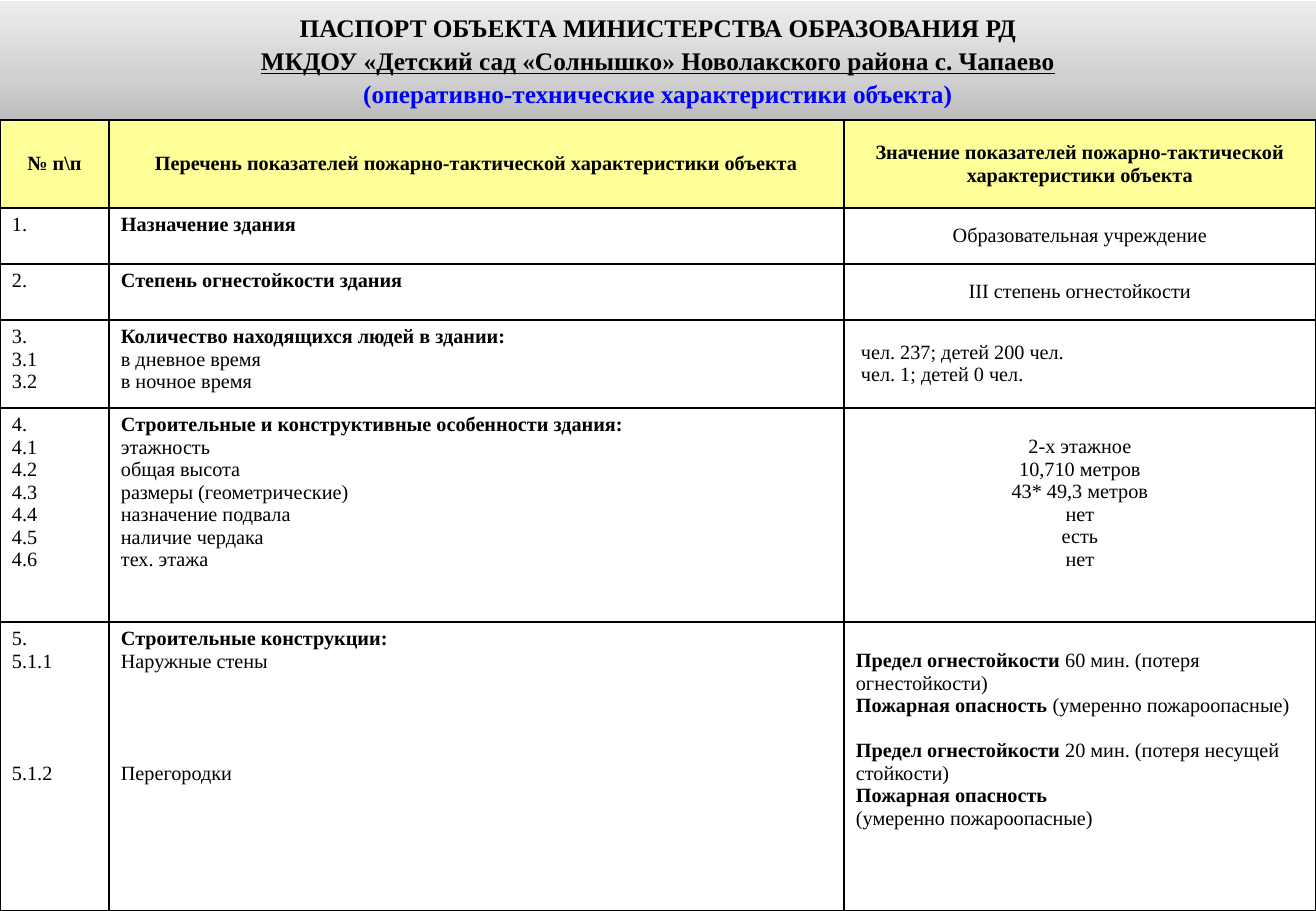
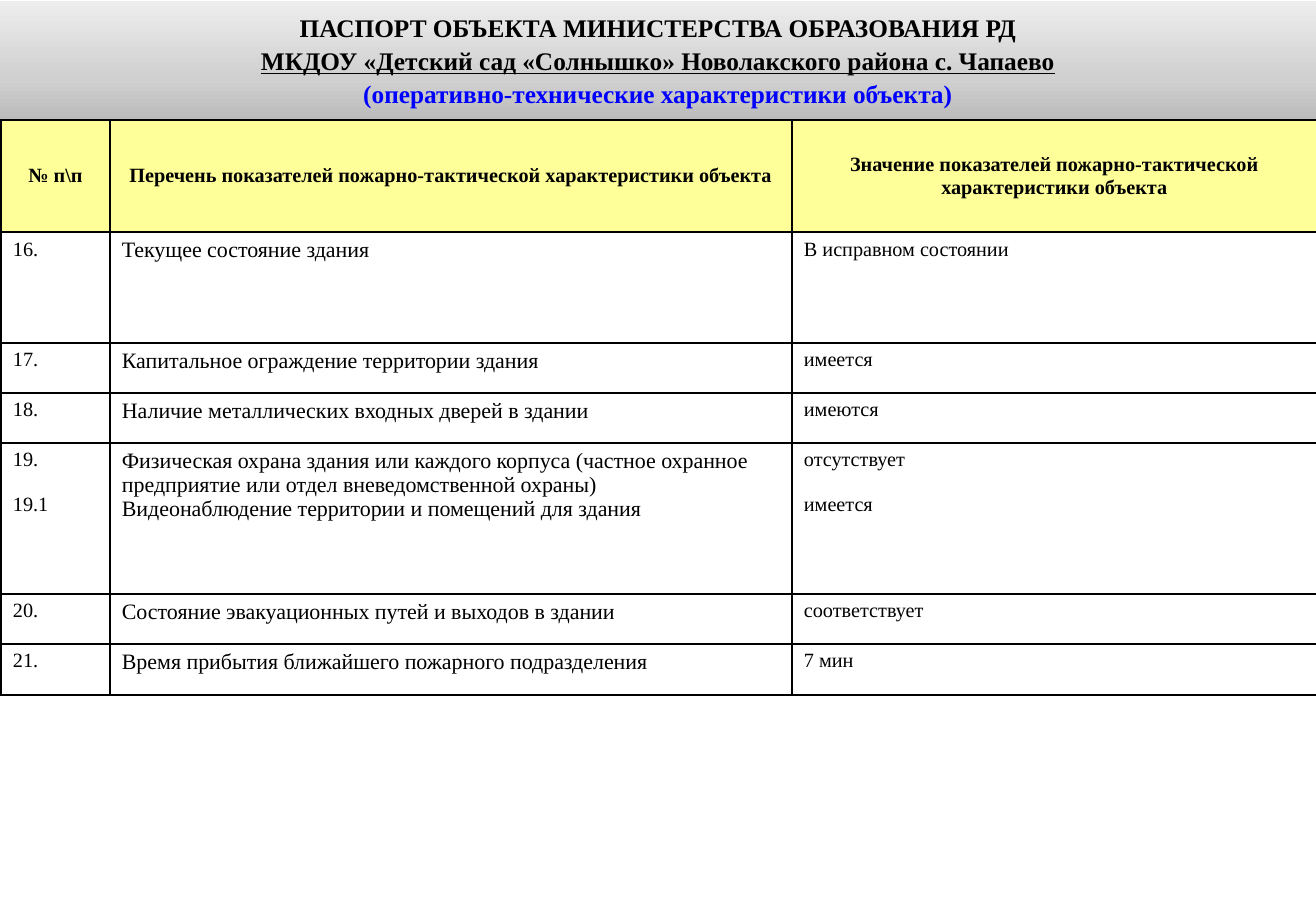
from dataclasses import dataclass, field

from lxml.etree import SubElement
from pptx import Presentation
from pptx.dml.color import RGBColor
from pptx.enum.text import MSO_ANCHOR, MSO_AUTO_SIZE, PP_ALIGN
from pptx.oxml.ns import qn
from pptx.util import Emu, Pt

# Shared look
EMU_PER_PX = 914400 / 121.5
SLIDE_W, SLIDE_H = 1316, 911
BAND_TOP, BAND_H = 1, 119
TABLE_TOP = BAND_TOP + BAND_H
INSET_X, INSET_Y = 12, 6
LINE_PX, LINE_PT = 22, 13.3  # height of one 12 pt line
FONT = "Times New Roman"
BLACK = RGBColor(0x00, 0x00, 0x00)
WHITE = RGBColor(0xFF, 0xFF, 0xFF)
BLUE = RGBColor(0x00, 0x00, 0xFF)
YELLOW = RGBColor(0xFF, 0xFF, 0x99)
BAND_STOPS = [
    (0, RGBColor(0xBC, 0xBC, 0xBC)),
    (35, RGBColor(0xD0, 0xD0, 0xD0)),
    (100, RGBColor(0xED, 0xED, 0xED)),
]
TITLE_LINES = [
    ("ПАСПОРТ ОБЪЕКТА МИНИСТЕРСТВА ОБРАЗОВАНИЯ РД", BLACK, False),
    ("МКДОУ «Детский сад «Солнышко» Новолакского района с. Чапаево", BLACK, True),
    ("(оперативно-технические характеристики объекта)", BLUE, False),
]


@dataclass
class Entry:
    """Cell content: in each line the part before "|" is bold."""
    lines: list
    gaps: dict = field(default_factory=dict)  # line index -> free lines above it
    size: int = 12
    align: PP_ALIGN = PP_ALIGN.LEFT
    anchor: MSO_ANCHOR = MSO_ANCHOR.TOP
    lead: int = 0  # free lines above the first line
    indent: int = 0
    fill: RGBColor = WHITE


def centred(text, fill=WHITE):
    return Entry([text], align=PP_ALIGN.CENTER, anchor=MSO_ANCHOR.MIDDLE, fill=fill)


HEADINGS = [centred(text + "|", YELLOW) for text in (
    "№ п\\п",
    "Перечень показателей пожарно-тактической характеристики объекта",
    "Значение показателей пожарно-тактической характеристики объекта",
)]

BUILDING_ROWS = [
    [Entry(["1."]), Entry(["Назначение здания|"]), centred("Образовательная учреждение")],
    [Entry(["2."]), Entry(["Степень огнестойкости здания|"]),
     centred("III степень огнестойкости")],
    [Entry(["3.", "3.1", "3.2"]),
     Entry(["Количество находящихся людей в здании:|", "в дневное время", "в ночное время"]),
     Entry(["чел. 237; детей 200 чел.", "чел. 1; детей 0 чел."],
           anchor=MSO_ANCHOR.MIDDLE, indent=5)],
    [Entry(["4.", "4.1", "4.2", "4.3", "4.4", "4.5", "4.6"]),
     Entry(["Строительные и конструктивные особенности здания:|", "этажность",
            "общая высота", "размеры (геометрические)", "назначение подвала",
            "наличие чердака", "тех. этажа"]),
     Entry(["2-х этажное", "10,710 метров", "43* 49,3 метров", "нет", "есть", "нет"],
           align=PP_ALIGN.CENTER, lead=1)],
    [Entry(["5.", "5.1.1", "5.1.2"], {2: 4}),
     Entry(["Строительные конструкции:|", "Наружные стены", "Перегородки"], {2: 4}),
     Entry(["Предел огнестойкости |60 мин. (потеря огнестойкости)",
            "Пожарная опасность |(умеренно пожароопасные)",
            "Предел огнестойкости |20 мин. (потеря несущей стойкости)",
            "Пожарная опасность|", "(умеренно пожароопасные)"], {2: 1}, lead=1)],
]


def status_row(number, name, value):
    return [Entry([number]), Entry([name], size=13), Entry([value])]


STATUS_ROWS = [
    status_row("16.", "Текущее состояние здания", "В исправном состоянии"),
    status_row("17.", "Капитальное ограждение территории здания", "имеется"),
    status_row("18.", "Наличие металлических входных дверей в здании", "имеются"),
    [Entry(["19.", "19.1"], {1: 1}),
     Entry(["Физическая охрана здания или каждого корпуса (частное охранное "
            "предприятие или отдел вневедомственной охраны)",
            "Видеонаблюдение территории и помещений для здания"], size=13),
     Entry(["отсутствует", "имеется"], {1: 1})],
    status_row("20.", "Состояние эвакуационных путей и выходов в здании", "соответствует"),
    status_row("21.", "Время прибытия ближайшего пожарного подразделения", "7 мин"),
]


def px(value):
    return Emu(round(value * EMU_PER_PX))


def set_font(font, size, color):
    font.name, font.size, font.color.rgb = FONT, Pt(size), color


def add_color(parent, color):
    SubElement(SubElement(parent, qn("a:solidFill")), qn("a:srgbClr"), val=str(color))


def fill_title_band(title, left, top, width, height):
    title.left, title.top, title.width, title.height = map(px, (left, top, width, height))
    # Three-stop gradient, darkest at the bottom
    gradient = SubElement(title.element.spPr, qn("a:gradFill"), rotWithShape="1")
    stops = SubElement(gradient, qn("a:gsLst"))
    for percent, color in BAND_STOPS:
        stop = SubElement(stops, qn("a:gs"), pos=str(percent * 1000))
        SubElement(stop, qn("a:srgbClr"), val=str(color))
    SubElement(gradient, qn("a:lin"), ang=str(270 * 60000), scaled="1")
    # Title lines
    frame = title.text_frame
    frame.auto_size = MSO_AUTO_SIZE.NONE
    frame.word_wrap = True
    frame.vertical_anchor = MSO_ANCHOR.MIDDLE
    frame.text = "\n".join(text for text, _, _ in TITLE_LINES)
    for index, (_, color, underline) in enumerate(TITLE_LINES):
        paragraph = frame.paragraphs[index]
        paragraph.alignment = PP_ALIGN.CENTER
        paragraph.space_before = Pt(1.5 if index else 0)
        set_font(paragraph.font, 15, color)
        paragraph.font.bold = True
        paragraph.font.underline = underline


def add_borders(cell):
    properties = cell._tc.get_or_add_tcPr()
    for side in ("lnL", "lnR", "lnT", "lnB"):
        add_color(SubElement(properties, qn(f"a:{side}"), w=str(Pt(1))), BLACK)


def fill_cell(cell, entry):
    add_borders(cell)
    cell.fill.solid()
    cell.fill.fore_color.rgb = entry.fill
    cell.margin_left, cell.margin_right = px(INSET_X + entry.indent), px(INSET_X)
    cell.margin_top, cell.margin_bottom = px(INSET_Y + entry.lead * LINE_PX), px(INSET_Y)
    cell.vertical_anchor = entry.anchor
    frame = cell.text_frame
    for index, line in enumerate(entry.lines):
        paragraph = frame.add_paragraph() if index else frame.paragraphs[0]
        paragraph.alignment = entry.align
        if index in entry.gaps:
            paragraph.space_before = Pt(entry.gaps[index] * LINE_PT)
        set_font(paragraph.font, entry.size, BLACK)
        strong, mark, plain = line.partition("|")
        if not mark:
            strong, plain = "", line
        if strong and plain:
            paragraph.add_run().text = strong
            paragraph.runs[0].font.bold = True
            paragraph.add_run().text = plain
        else:
            paragraph.add_run().text = strong or plain
            paragraph.font.bold = bool(strong)


def add_indicator_table(slide, left, top, widths, heights, rows):
    rows = [HEADINGS] + rows
    table = slide.shapes.add_table(
        len(rows), len(widths), px(left), px(top), px(sum(widths)), px(sum(heights))).table
    table.first_row = table.horz_banding = False
    for column, width in zip(table.columns, widths):
        column.width = px(width)
    for row, height, entries in zip(table.rows, heights, rows):
        row.height = px(height)
        for cell, entry in zip(row.cells, entries):
            fill_cell(cell, entry)


def add_passport_slide(deck, left, widths, heights, rows):
    slide = deck.slides.add_slide(deck.slide_layouts[5])
    fill_title_band(slide.shapes.title, 0, BAND_TOP, SLIDE_W, BAND_H)
    add_indicator_table(slide, left, TABLE_TOP, widths, heights, rows)


def main():
    deck = Presentation()
    deck.slide_width, deck.slide_height = px(SLIDE_W), px(SLIDE_H)
    add_passport_slide(deck, 0, [109, 735, 472], [88, 56, 56, 88, 214, 289], BUILDING_ROWS)
    add_passport_slide(deck, 1, [109, 682, 525], [112, 111, 50, 50, 151, 50, 51], STATUS_ROWS)
    deck.save("out.pptx")


if __name__ == "__main__":
    main()
